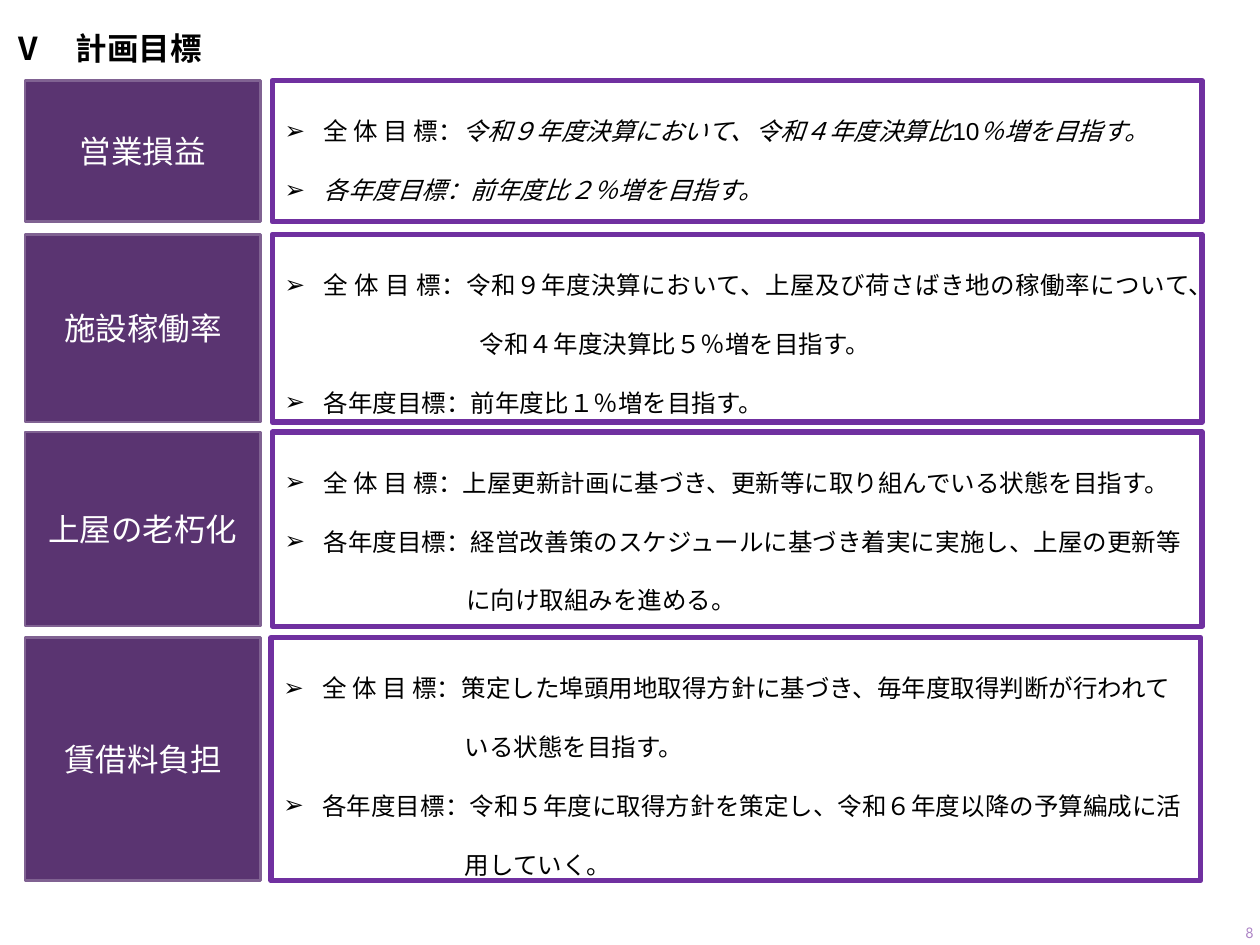
from lxml import etree
from pptx import Presentation
from pptx.dml.color import RGBColor
from pptx.enum import shapes, text
from pptx.oxml.ns import qn
from pptx.util import Inches, Pt

PLUM = RGBColor(0x5A, 0x34, 0x71)
EDGE = RGBColor(0x80, 0x62, 0x92)
VIOLET = RGBColor(0x70, 0x30, 0xA0)
LILAC = RGBColor(0xAD, 0x84, 0xC6)
BLACK = RGBColor(0, 0, 0)
WHITE = RGBColor(255, 255, 255)
BODY, HEAD = "Arial", "League Spartan"

# Content: label, top, height, box left, lines
# A line is (indent, runs); indent 0 means a bullet; a run is (text, italic)
ROWS = [
    ("営業損益", 0.64, 1.12, 2.16, [
        (0, [("全 体 目 標：", False),
             ("令和９年度決算において、令和４年度決算比", True),
             ("10", False), ("％増を目指す。", True)]),
        (0, [("各年度目標：前年度比２％増を目指す。", True)])]),
    ("施設稼働率", 1.86, 1.49, 2.16, [
        (0, [("全 体 目 標：令和９年度決算において、上屋及び荷さばき地の稼働率について、", False)]),
        (1.55, [("令和４年度決算比５％増を目指す。", False)]),
        (0, [("各年度目標：前年度比１％増を目指す。", False)])]),
    ("上屋の老朽化", 3.43, 1.54, 2.16, [
        (0, [("全 体 目 標：上屋更新計画に基づき、更新等に取り組んでいる状態を目指す。", False)]),
        (0, [("各年度目標：経営改善策のスケジュールに基づき着実に実施し、上屋の更新等", False)]),
        (1.44, [("に向け取組みを進める。", False)])]),
    ("賃借料負担", 5.06, 1.93, 2.15, [
        (0, [("全 体 目 標：策定した埠頭用地取得方針に基づき、毎年度取得判断が行われて", False)]),
        (1.44, [("いる状態を目指す。", False)]),
        (0, [("各年度目標：令和５年度に取得方針を策定し、令和６年度以降の予算編成に活", False)]),
        (1.44, [("用していく。", False)])]),
]
LEFT, LABEL_W, GOAL_W, HANG = 0.2, 1.87, 7.38, 0.31


def style(run, size, face, color, bold=False, italic=False):
    font = run.font
    font.size, font.name, font.bold, font.italic = Pt(size), face, bold, italic
    font.color.rgb = color


def box(slide, x, y, w, h, line, width, fill=None):
    rect = slide.shapes.add_shape(shapes.MSO_SHAPE.RECTANGLE,
                                  Inches(x), Inches(y), Inches(w), Inches(h))
    rect.shadow.inherit = False
    if fill is None:
        rect.fill.background()
    else:
        rect.fill.solid()
        rect.fill.fore_color.rgb = fill
    rect.line.color.rgb = line
    rect.line.width = Pt(width)
    rect.text_frame.word_wrap = True
    return rect


def indent(para, left):
    """Hang a bullet, or start a continued line at the given indent."""
    props = para._p.get_or_add_pPr()
    props.set("marL", str(Inches(left or HANG)))
    props.set("indent", str(0 if left else -Inches(HANG)))
    if not left:
        etree.SubElement(props, qn("a:buFont")).set("typeface", BODY)
        etree.SubElement(props, qn("a:buChar")).set("char", "➢")


def add_label(slide, name, y, h):
    rect = box(slide, LEFT, y, LABEL_W, h, EDGE, 1.5, PLUM)
    frame = rect.text_frame
    frame.text = name
    frame.vertical_anchor = text.MSO_ANCHOR.MIDDLE
    para = frame.paragraphs[0]
    para.alignment = text.PP_ALIGN.CENTER
    style(para.runs[0], 18, HEAD, WHITE)


def add_goals(slide, x, y, h, lines):
    frame = box(slide, x, y, GOAL_W, h, VIOLET, 3).text_frame
    frame.vertical_anchor = text.MSO_ANCHOR.TOP
    for i, (left, runs) in enumerate(lines):
        para = frame.add_paragraph() if i else frame.paragraphs[0]
        para.alignment = text.PP_ALIGN.JUSTIFY
        para.line_spacing = 2.0
        indent(para, left)
        for words, slant in runs:
            run = para.add_run()
            run.text = words
            style(run, 14, BODY, BLACK, italic=slant)


def main():
    deck = Presentation()
    deck.slide_width, deck.slide_height = Inches(10), Inches(7.5)
    slide = deck.slides.add_slide(deck.slide_layouts[5])

    # Title
    title = slide.shapes.title
    title.left, title.top = Inches(0), Inches(0.18)
    title.width, title.height = Inches(8.62), Inches(1.11)
    frame = title.text_frame
    frame.text = "Ⅴ　計画目標"
    frame.vertical_anchor = text.MSO_ANCHOR.TOP
    frame.paragraphs[0].alignment = text.PP_ALIGN.LEFT
    style(frame.paragraphs[0].runs[0], 18, BODY, BLACK, bold=True)

    # Page number
    page = slide.shapes.add_textbox(Inches(9.49), Inches(7.2),
                                    Inches(0.56), Inches(0.4))
    frame = page.text_frame
    frame.word_wrap = True
    frame.text = "8"
    frame.vertical_anchor = text.MSO_ANCHOR.MIDDLE
    frame.paragraphs[0].alignment = text.PP_ALIGN.RIGHT
    style(frame.paragraphs[0].runs[0], 9, HEAD, LILAC)

    # Goal rows
    for name, y, h, x, lines in ROWS:
        add_label(slide, name, y, h)
        add_goals(slide, x, y, h, lines)

    deck.save("out.pptx")


if __name__ == "__main__":
    main()
